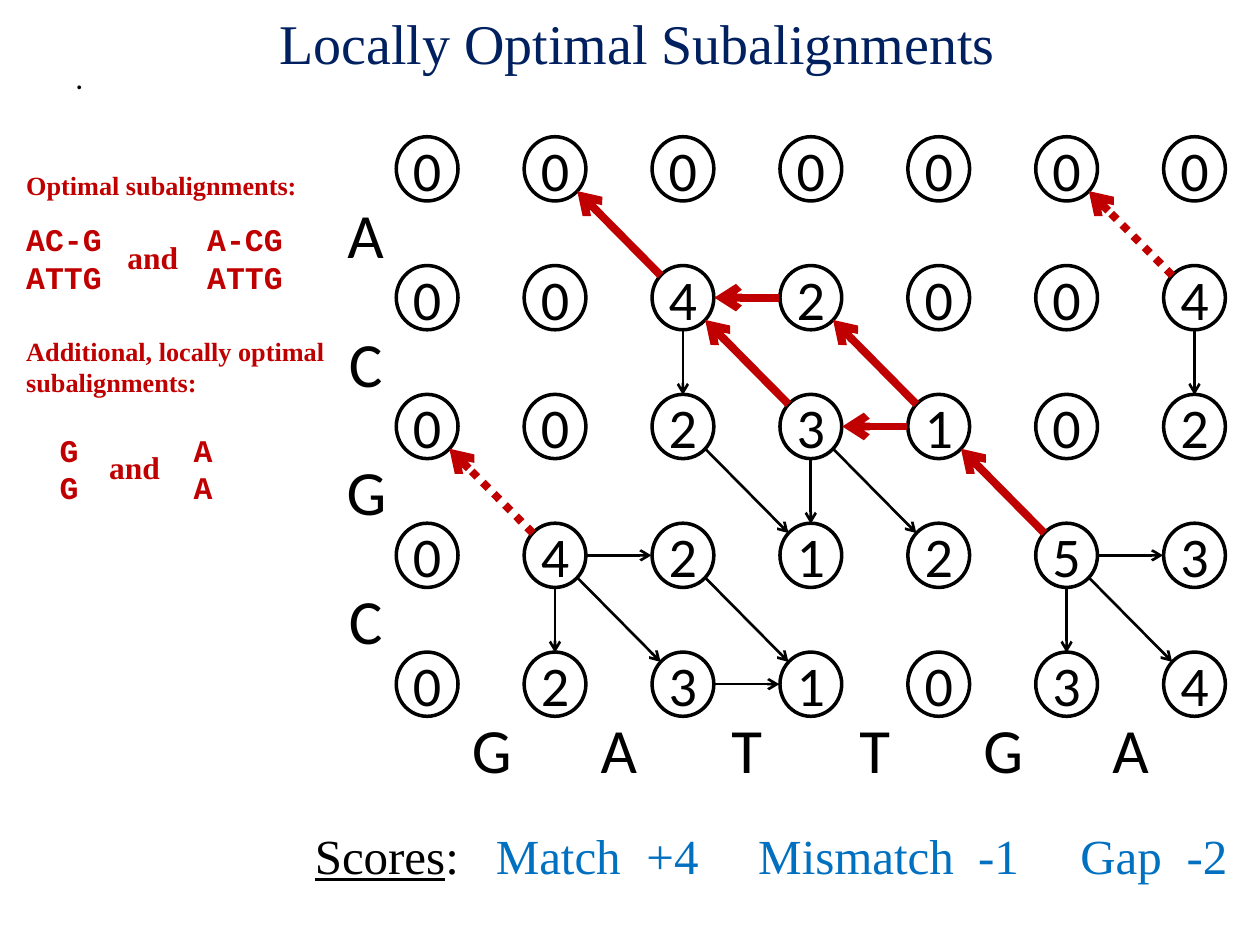
from dataclasses import dataclass

from lxml.etree import SubElement
from pptx import Presentation
from pptx.dml.color import RGBColor
from pptx.enum.dml import MSO_LINE
from pptx.enum.shapes import MSO_CONNECTOR, MSO_SHAPE
from pptx.enum.text import MSO_ANCHOR, PP_ALIGN
from pptx.oxml.ns import qn
from pptx.util import Inches, Pt

COLORS = {"title": "002060", "ink": "000000", "paper": "FFFFFF", "trace": "C00000", "score": "0070C0"}
SERIF, SANS, MONO = "Times New Roman", "Calibri", "Courier New"

CELL_VALUES = ["0000000", "0042004", "0023102", "0421253", "0231034"]
SIDE_SEQUENCE, BOTTOM_SEQUENCE = "ACGC", "GATTGA"
EXTENSIONS = [
    ((1, 2), (2, 2)), ((1, 6), (2, 6)), ((2, 2), (3, 3)), ((2, 3), (3, 3)), ((2, 3), (3, 4)),
    ((3, 1), (3, 2)), ((3, 1), (4, 1)), ((3, 1), (4, 2)), ((3, 2), (4, 3)), ((3, 5), (3, 6)),
    ((3, 5), (4, 5)), ((3, 5), (4, 6)), ((4, 2), (4, 3)),
]
OPTIMAL_TRACES = [
    ((3, 5), (2, 4)), ((2, 4), (2, 3)), ((2, 4), (1, 3)),
    ((2, 3), (1, 2)), ((1, 3), (1, 2)), ((1, 2), (0, 1)),
]
LOCAL_TRACES = [((3, 1), (2, 0)), ((1, 6), (0, 5))]


@dataclass
class Box:
    """A rectangle in inches."""

    left: float
    top: float
    width: float
    height: float

    def emu(self):
        """Return the four lengths ready for python-pptx."""
        return [Inches(length) for length in (self.left, self.top, self.width, self.height)]


@dataclass
class Grid:
    """Evenly spaced cell centres spanning a box."""

    box: Box
    rows: int
    columns: int

    def center(self, row, column):
        """Return the x and y of a possibly fractional grid position."""
        x = self.box.left + column * self.box.width / (self.columns - 1)
        y = self.box.top + row * self.box.height / (self.rows - 1)
        return x, y

    def around(self, row, column, width, height):
        """Return a box centred on a grid position."""
        x, y = self.center(row, column)
        return Box(x - width / 2, y - height / 2, width, height)


def style_run(run, font, size, color, bold=False):
    """Apply a typeface, size and colour to one run."""
    run.font.name = font
    run.font.size = Pt(size)
    run.font.bold = bold
    run.font.color.rgb = RGBColor.from_string(COLORS[color])


def fill_text(shape, text, font, size, color, bold=False, align=PP_ALIGN.LEFT, wrap=True):
    """Write text into a shape and format every run."""
    frame = shape.text_frame
    frame.text = text
    frame.word_wrap = wrap
    for paragraph in frame.paragraphs:
        paragraph.alignment = align
        for run in paragraph.runs:
            style_run(run, font, size, color, bold)


def add_label(slide, box, text, *style, **options):
    """Add a text box holding one formatted text."""
    label = slide.shapes.add_textbox(*box.emu())
    fill_text(label, text, *style, **options)
    return label


def add_title(slide, box):
    """Place and format the title placeholder."""
    title = slide.shapes.title
    title.left, title.top, title.width, title.height = box.emu()
    fill_text(title, "Locally Optimal Subalignments", SERIF, 32, "title", align=PP_ALIGN.CENTER)
    title.text_frame.vertical_anchor = MSO_ANCHOR.MIDDLE


def add_node(slide, box, value):
    """Add one circled cell of the score matrix."""
    node = slide.shapes.add_shape(MSO_SHAPE.OVAL, *box.emu())
    node.shadow.inherit = False
    node.fill.solid()
    node.fill.fore_color.rgb = RGBColor.from_string(COLORS["paper"])
    node.line.color.rgb = RGBColor.from_string(COLORS["ink"])
    node.line.width = Pt(2)
    fill_text(node, value, SANS, 32, "ink", align=PP_ALIGN.CENTER, wrap=False)
    frame = node.text_frame
    frame.vertical_anchor = MSO_ANCHOR.MIDDLE
    frame.margin_left = frame.margin_right = frame.margin_top = frame.margin_bottom = 0


def add_arrow(slide, grid, start, end, color, width, dash=None):
    """Draw an arrow between the rims of two matrix cells."""
    row_step, column_step = end[0] - start[0], end[1] - start[1]
    reach = 0.25 / (row_step ** 2 + column_step ** 2) ** 0.5
    start_x, start_y = grid.center(*start)
    end_x, end_y = grid.center(*end)
    points = (
        start_x + reach * column_step, start_y + reach * row_step,
        end_x - reach * column_step, end_y - reach * row_step,
    )
    arrow = slide.shapes.add_connector(MSO_CONNECTOR.STRAIGHT, *map(Inches, points))
    arrow.line.color.rgb = RGBColor.from_string(COLORS[color])
    arrow.line.width = Pt(width)
    if dash:
        arrow.line.dash_style = dash
    properties = arrow._element.spPr
    SubElement(properties.find(qn("a:ln")), qn("a:tailEnd"), type="arrow")
    SubElement(properties, qn("a:effectLst"))


def add_matrix(slide, box):
    """Draw the score matrix with its sequences and arrows."""
    grid = Grid(box, len(CELL_VALUES), len(CELL_VALUES[0]))
    for row, values in enumerate(CELL_VALUES):
        for column, value in enumerate(values):
            add_node(slide, grid.around(row, column, 0.49, 0.51), value)
    letters = [(row + 0.5, -0.48, letter) for row, letter in enumerate(SIDE_SEQUENCE)]
    letters += [(grid.rows - 0.5, column + 0.5, letter) for column, letter in enumerate(BOTTOM_SEQUENCE)]
    for row, column, letter in letters:
        spot = grid.around(row, column, 0.5, 0.7)
        add_label(slide, spot, letter, SANS, 36, "ink", align=PP_ALIGN.CENTER, wrap=False)
    for arrows, *style in (
        (EXTENSIONS, "ink", 1.5),
        (OPTIMAL_TRACES, "trace", 4.5),
        (LOCAL_TRACES, "trace", 4.5, MSO_LINE.ROUND_DOT),
    ):
        for start, end in arrows:
            add_arrow(slide, grid, start, end, *style)


def add_pair(slide, box, word_width, first, second):
    """Place two alignments at the sides of a box, joined by a word."""
    for left, text in ((box.left, first), (box.left + box.width - word_width, second)):
        spot = Box(left, box.top, word_width, box.height)
        add_label(slide, spot, text, MONO, 18, "trace", bold=True)
    joiner = Box(box.left + box.width / 2 - 0.35, box.top + 0.2 * box.height, 0.61, 0.4)
    add_label(slide, joiner, "and", SERIF, 18, "trace", bold=True, wrap=False)


def add_notes(slide, box):
    """List the optimal and the locally optimal subalignments."""
    for top, height, heading in (
        (0, 0.13, "Optimal subalignments:"),
        (0.473, 0.22, "Additional, locally optimal\nsubalignments:"),
    ):
        spot = Box(box.left, box.top + top * box.height, box.width, height * box.height)
        add_label(slide, spot, heading, SERIF, 15, "trace", bold=True)
    for left, top, width, word_width, first, second in (
        (0, 0.147, 0.87, 0.87, "AC-G ATTG", "A-CG ATTG"),
        (0.1, 0.745, 0.56, 0.42, "G G", "A A"),
    ):
        spot = Box(box.left + left * box.width, box.top + top * box.height, width * box.width, 0.71)
        add_pair(slide, spot, word_width, first, second)


def add_scores(slide, box):
    """Write the scoring scheme on tab stops."""
    label = add_label(slide, box, "Scores", SERIF, 28, "ink")
    paragraph = label.text_frame.paragraphs[0]
    paragraph.runs[0].font.underline = True
    for text, color in ((":", "ink"), ("\tMatch\t+4\tMismatch\t-1\tGap\t-2", "score")):
        run = paragraph.add_run()
        run.text = text
        style_run(run, SERIF, 28, color)
    tab_stops = SubElement(paragraph._p.get_or_add_pPr(), qn("a:tabLst"))
    for share in (0.191, 0.35, 0.468, 0.7, 0.808, 0.92):
        SubElement(tab_stops, qn("a:tab"), pos=str(Inches(share * box.width)), algn="l")


def main():
    """Build and save the slide."""
    presentation = Presentation()
    presentation.slide_width, presentation.slide_height = Inches(10), Inches(7.5)
    slide = presentation.slides.add_slide(presentation.slide_layouts[5])
    add_title(slide, Box(0.56, 0, 9, 0.67))
    add_scores(slide, Box(2.4, 6.5, 7.52, 0.57))
    add_matrix(slide, Box(3.39, 1.34, 6.09, 4.09))
    add_label(slide, Box(0.5, 0.41, 0.27, 0.4), ".", SANS, 18, "ink", wrap=False)
    add_notes(slide, Box(0.11, 1.29, 2.65, 2.79))
    presentation.save("out.pptx")


if __name__ == "__main__":
    main()
